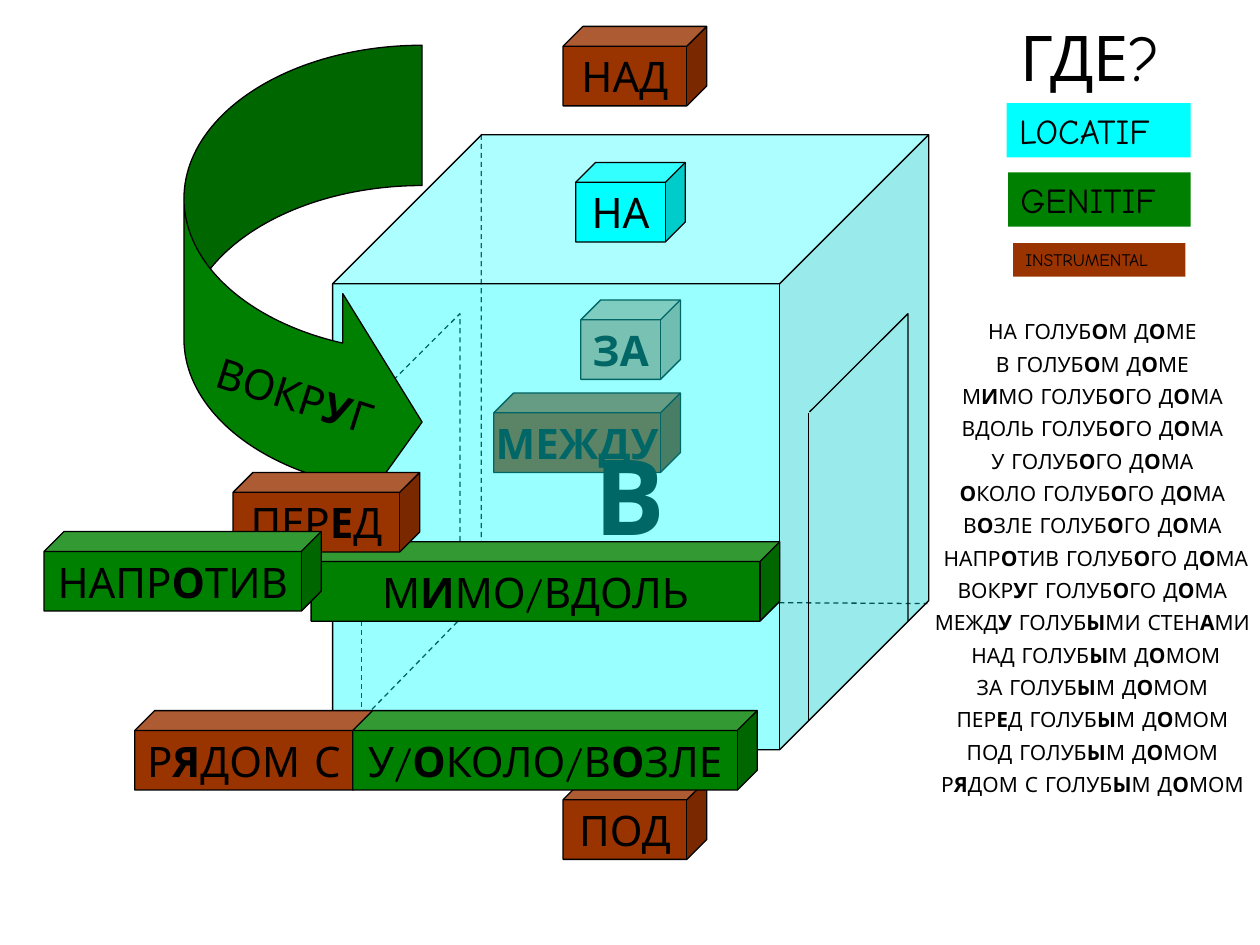
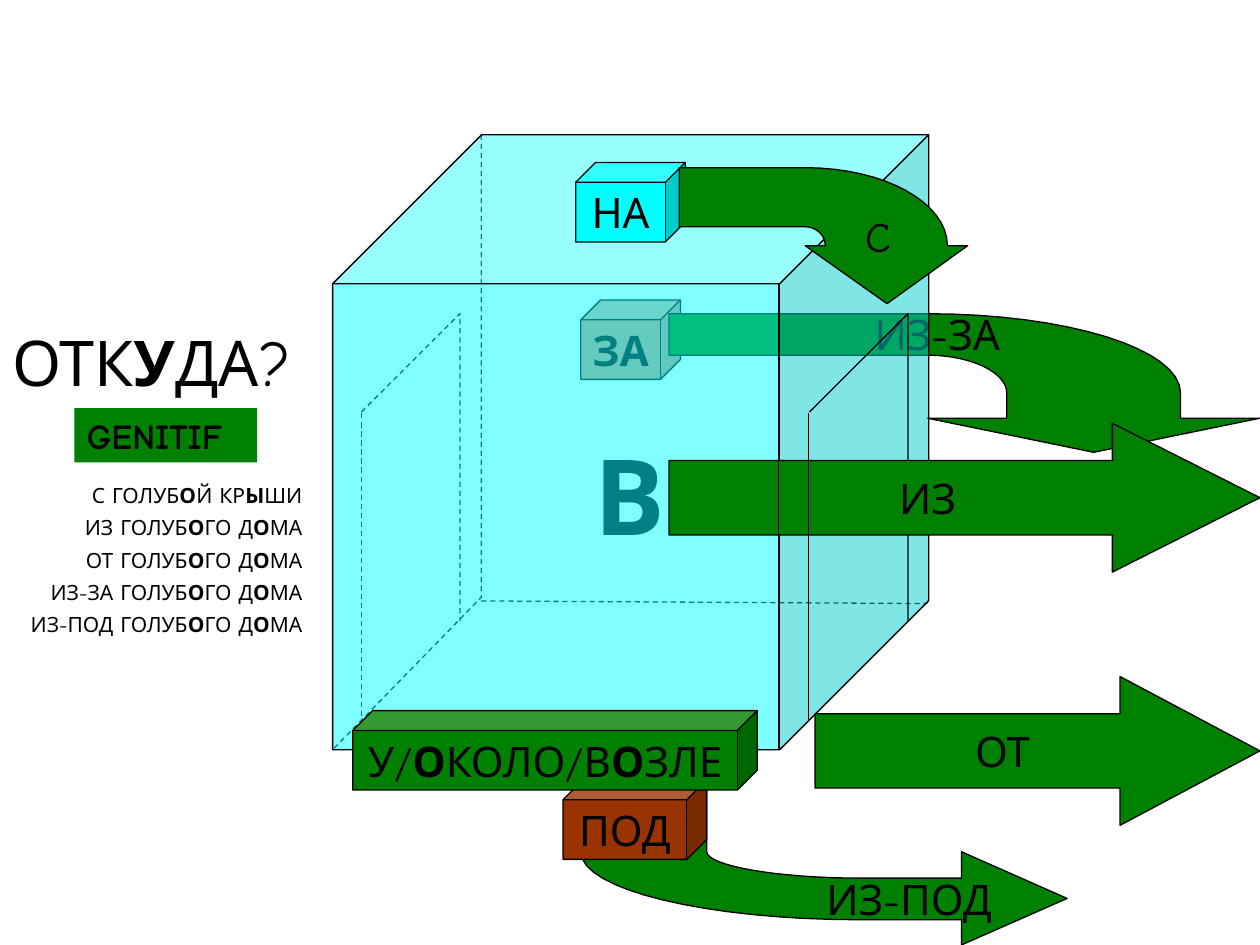
from lxml.etree import SubElement
from pptx import Presentation
from pptx.dml.color import RGBColor
from pptx.enum.dml import MSO_LINE_DASH_STYLE as DASH
from pptx.enum.shapes import MSO_CONNECTOR as CONN, MSO_SHAPE as SHAPE
from pptx.enum.text import MSO_ANCHOR as ANCHOR, PP_ALIGN as ALIGN
from pptx.oxml.ns import qn
from pptx.util import Pt

COLORS = {"black": "000000", "locative": "00FFFF", "genitive": "008000", "instrumental": "993300"}
CUBE_H = 45.4
HOUSE = (190.1, 77, 340.6, 351.4)
ZERO_INSETS = dict.fromkeys(("margin_left", "margin_top", "margin_right", "margin_bottom"), 0)


def bezier(start, curve, steps=16):
    """Return points along a cubic curve, without its start."""
    pts = [start, curve[:2], curve[2:4], curve[4:]]
    result = []
    for i in range(1, steps + 1):
        t = i / steps
        weights = ((1 - t) ** 3, 3 * t * (1 - t) ** 2, 3 * t * t * (1 - t), t ** 3)
        result.append(tuple(sum(w * p[axis] for w, p in zip(weights, pts)) for axis in (0, 1)))
    return result


class Deck:
    """Holds the style and the current slide and draws each kind of element."""

    def __init__(self):
        self.prs = Presentation()
        self.prs.slide_width, self.prs.slide_height = Pt(720), Pt(540)
        self.font = "Comic Neue"
        self.s = None

    def new_slide(self):
        self.s = self.prs.slides.add_slide(self.prs.slide_layouts[6])

    def color(self, name):
        return RGBColor.from_string(COLORS[name])

    def outline(self, sp, dash=False):
        sp.line.color.rgb = self.color("black")
        sp.line.width = Pt(0.75)
        if dash:
            sp.line.dash_style = DASH.DASH

    def paint(self, sp, fill, opacity=100):
        sp.shadow.inherit = False
        if fill is None:
            sp.fill.background()
            return
        sp.fill.solid()
        sp.fill.fore_color.rgb = self.color(fill)
        if opacity < 100:
            rgb = sp._element.spPr.find(qn("a:solidFill")).find(qn("a:srgbClr"))
            SubElement(rgb, qn("a:alpha"), val=str(opacity * 1000))

    def put_text(self, sp, lines, size=24, bold=False, align=ALIGN.CENTER, **frame):
        tf = sp.text_frame
        settings = {"word_wrap": False, "vertical_anchor": ANCHOR.MIDDLE, **frame}
        for name, value in settings.items():
            setattr(tf, name, value)
        for i, line in enumerate(lines):
            p = tf.add_paragraph() if i else tf.paragraphs[0]
            p.alignment = align
            p.space_before = Pt(4.1 if i else 0)
            for j, part in enumerate(line.split("*")):
                if part:
                    r = p.add_run()
                    r.text = part
                    style = {"name": self.font, "size": Pt(size), "bold": bold or j % 2 == 1}
                    for name, value in style.items():
                        setattr(r.font, name, value)
                    r.font.color.rgb = self.color("black")

    def shape(self, kind, box, fill, text="", opacity=100, **style):
        sp = self.s.shapes.add_shape(kind, *map(Pt, box))
        self.paint(sp, fill, opacity)
        self.outline(sp)
        if text:
            self.put_text(sp, [text], **style)
        return sp

    def cube(self, text, x, y, w, fill, **style):
        return self.shape(SHAPE.CUBE, (x, y, w, CUBE_H), fill, text, **style)

    def arrow(self, text, box, head):
        sp = self.shape(SHAPE.RIGHT_ARROW, box, "genitive", text)
        sp.adjustments[1] = head

    def text(self, lines, box, rotation=0, **style):
        sp = self.s.shapes.add_textbox(*map(Pt, box))
        sp.rotation = rotation
        self.put_text(sp, lines, **style)

    def title(self, text, box):
        self.text([text], box, size=36, align=ALIGN.LEFT)

    def sentences(self, lines, box, align):
        self.text(lines, box, size=12, align=align, word_wrap=True,
                  **{**ZERO_INSETS, "vertical_anchor": ANCHOR.TOP})

    def legend(self, text, box, fill, size=20, bold=False):
        sp = self.shape(SHAPE.RECTANGLE, box, fill, text, size=size, bold=bold,
                        align=ALIGN.LEFT, word_wrap=True)
        sp.line.fill.background()

    def line(self, x1, y1, x2, y2, dash=False):
        c = self.s.shapes.add_connector(CONN.STRAIGHT, *map(Pt, (x1, y1, x2, y2)))
        self.outline(c, dash)
        SubElement(c._element.spPr, qn("a:effectLst"))

    def outlined_path(self, start, steps, fill=None, dash=False):
        pts = [start]
        for step in steps:
            pts += bezier(pts[-1], step) if len(step) == 6 else [step]
        pts = [(Pt(x), Pt(y)) for x, y in pts]
        builder = self.s.shapes.build_freeform(*pts[0], scale=1.0)
        builder.add_line_segments(pts[1:], close=fill is not None)
        sp = builder.convert_to_shape()
        self.paint(sp, fill)
        self.outline(sp, dash)
        return sp

    def door(self, x, dash=False):
        self.outlined_path((x, 235.4), [(x + 56.2, 179.3), (x + 56.2, 355)], dash=dash)

    def jamb(self, x, dash=False):
        self.line(x, 236.2, x, 411.8, dash)

    def house(self, opacity):
        self.line(275, 343.4, 529.9, 344.9, dash=True)
        self.jamb(206.6, dash=True)
        self.text(["В"], (339.8, 246.2, 38.2, 72), size=60, bold=True, **ZERO_INSETS)
        self.outlined_path((275, 77), [(275, 341.3), (190.1, 428.4)], dash=True)
        self.door(206.6, dash=True)
        self.shape(SHAPE.CUBE, HOUSE, "locative", opacity=opacity)
        self.door(462.6)

    def behind(self):
        self.cube("ЗА", 331.9, 171.4, 56.9, "instrumental", opacity=50, bold=True)

    def on_top(self):
        self.cube("НА", 329, 92.9, 62.6, "locative")

    def under(self):
        self.cube("ПОД", 321.8, 445.7, 82.1, "instrumental")

    def beside(self):
        self.cube("У/*О*КОЛО/В*О*ЗЛЕ", 201.6, 406.1, 231.1, "genitive")


def where_slide(d):
    """Draw the slide on where things are."""
    d.new_slide()
    d.behind()
    d.cube("МЕЖДУ", 282.2, 224.6, 106.6, "instrumental", bold=True)
    d.under()
    d.house(40)
    d.jamb(462.2)
    d.cube("М*И*МО/ВДОЛЬ", 177.8, 309.6, 267.8, "genitive")
    d.cube("Р*Я*ДОМ С", 77, 406.1, 136.1, "instrumental")
    d.beside()
    d.title("ГДЕ?", (576, 6.5, 106.6, 51.1))
    d.legend("LOCATIF", (575.3, 59, 105.1, 31), "locative")
    d.legend("GENITIF", (576, 98.6, 104.4, 31), "genitive")
    d.legend("INSTRUMENTAL", (578.9, 139, 98.6, 19.1), "instrumental", size=10)
    d.cube("НАД", 321.8, 15.1, 82.1, "instrumental")
    around = d.shape(SHAPE.CURVED_RIGHT_ARROW, (105.1, 25.9, 136.1, 283.7), "genitive")
    for i, value in enumerate((0.589, 1.005, 0.333)):
        around.adjustments[i] = value
    d.text(["ВОКР*У*Г"], (115.2, 207.4, 107.3, 36.7), rotation=17.7)
    d.sentences([
        "НА ГОЛУБ*О*М Д*О*МЕ",
        "В ГОЛУБ*О*М Д*О*МЕ",
        "М*И*МО ГОЛУБ*О*ГО Д*О*МА",
        "ВДОЛЬ ГОЛУБ*О*ГО Д*О*МА",
        "У ГОЛУБ*О*ГО Д*О*МА",
        "*О*КОЛО ГОЛУБ*О*ГО Д*О*МА",
        "В*О*ЗЛЕ ГОЛУБ*О*ГО Д*О*МА",
        " НАПР*О*ТИВ ГОЛУБ*О*ГО Д*О*МА",
        "ВОКР*У*Г ГОЛУБ*О*ГО Д*О*МА",
        "МЕЖД*У* ГОЛУБ*Ы*МИ СТЕН*А*МИ",
        " НАД ГОЛУБ*Ы*М Д*О*МОМ",
        "ЗА ГОЛУБ*Ы*М Д*О*МОМ",
        "ПЕР*Е*Д ГОЛУБ*Ы*М Д*О*МОМ",
        "ПОД ГОЛУБ*Ы*М Д*О*МОМ",
        "Р*Я*ДОМ С ГОЛУБ*Ы*М Д*О*МОМ",
    ], (529.2, 182.2, 190.1, 319.7), ALIGN.CENTER)
    d.cube("ПЕР*Е*Д", 133.2, 270, 106.6, "instrumental")
    d.cube("НАПР*О*ТИВ", 25.2, 303.8, 158.4, "genitive")
    d.on_top()


def from_where_slide(d):
    """Draw the slide on where things come from."""
    d.new_slide()
    d.outlined_path((609.8, 513.4), [
        (549.4, 540), (549.4, 525.6), (491.8, 525.6),
        (403.2, 525.6, 331.9, 508.3, 331.9, 486.7), (331.9, 445.7), (403.9, 445.7),
        (403.9, 486.7), (403.9, 494.6, 443.5, 501.8, 491.8, 501.8),
        (549.4, 501.8), (549.4, 486.7)], "genitive")
    d.text(["ИЗ-ПОД"], (454.3, 495.4, 130.3, 36))
    d.behind()
    d.outlined_path((625, 258.5), [
        (720, 239), (674.6, 239), (674.6, 224.6),
        (674.6, 199.4, 609.8, 179.3, 529.9, 179.3), (382.3, 179.3), (382.3, 203),
        (529.9, 203), (555.1, 203, 575.3, 213.1, 575.3, 224.6),
        (575.3, 239), (529.9, 239)], "genitive")
    d.text(["ИЗ-ЗА"], (498.2, 176.4, 74.9, 28.8), **ZERO_INSETS)
    d.house(50)
    d.on_top()
    d.arrow("ИЗ", (382.3, 241.9, 337.7, 85), 0.992)
    d.jamb(462.2)
    for x in (190.1, 445):
        d.line(x, 162, x, 428.4)
    d.title("ОТК*У*ДА?", (0, 181.4, 188.6, 50.4))
    d.legend("GENITIF", (42.5, 233.3, 104.4, 31), "genitive", bold=True)
    d.under()
    d.sentences([
        "С ГОЛУБ*О*Й КР*Ы*ШИ",
        "ИЗ ГОЛУБ*О*ГО Д*О*МА",
        "ОТ ГОЛУБ*О*ГО Д*О*МА",
        "ИЗ-ЗА ГОЛУБ*О*ГО Д*О*МА",
        "ИЗ-ПОД ГОЛУБ*О*ГО Д*О*МА",
    ], (2.9, 275.8, 169.9, 100.8), ALIGN.RIGHT)
    d.beside()
    d.arrow("ОТ", (465.8, 386.6, 254.2, 85), 0.94)
    off_roof = d.outlined_path((506.9, 173.5), [
        (553, 140.4), (541.4, 140.4), (541.4, 115.9, 505.4, 95.8, 460.1, 95.8),
        (388.1, 95.8), (388.1, 129.6), (460.1, 129.6),
        (466.6, 129.6, 471.6, 134.6, 471.6, 140.4), (460.1, 140.4)], "genitive")
    d.put_text(off_roof, ["C"], margin_left=Pt(70))


def main():
    """Build both slides and save them."""
    d = Deck()
    where_slide(d)
    from_where_slide(d)
    d.prs.save("out.pptx")


if __name__ == "__main__":
    main()
